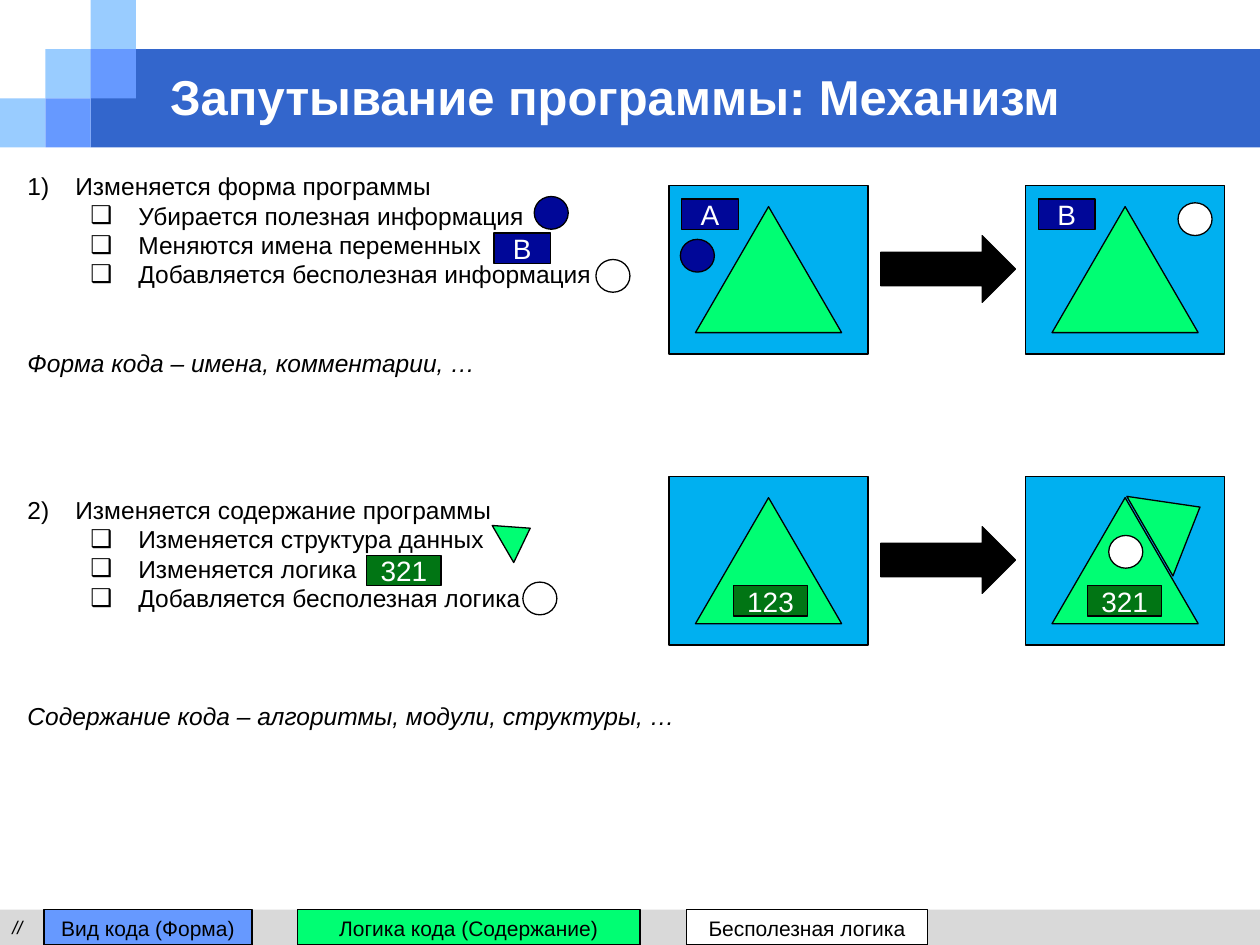
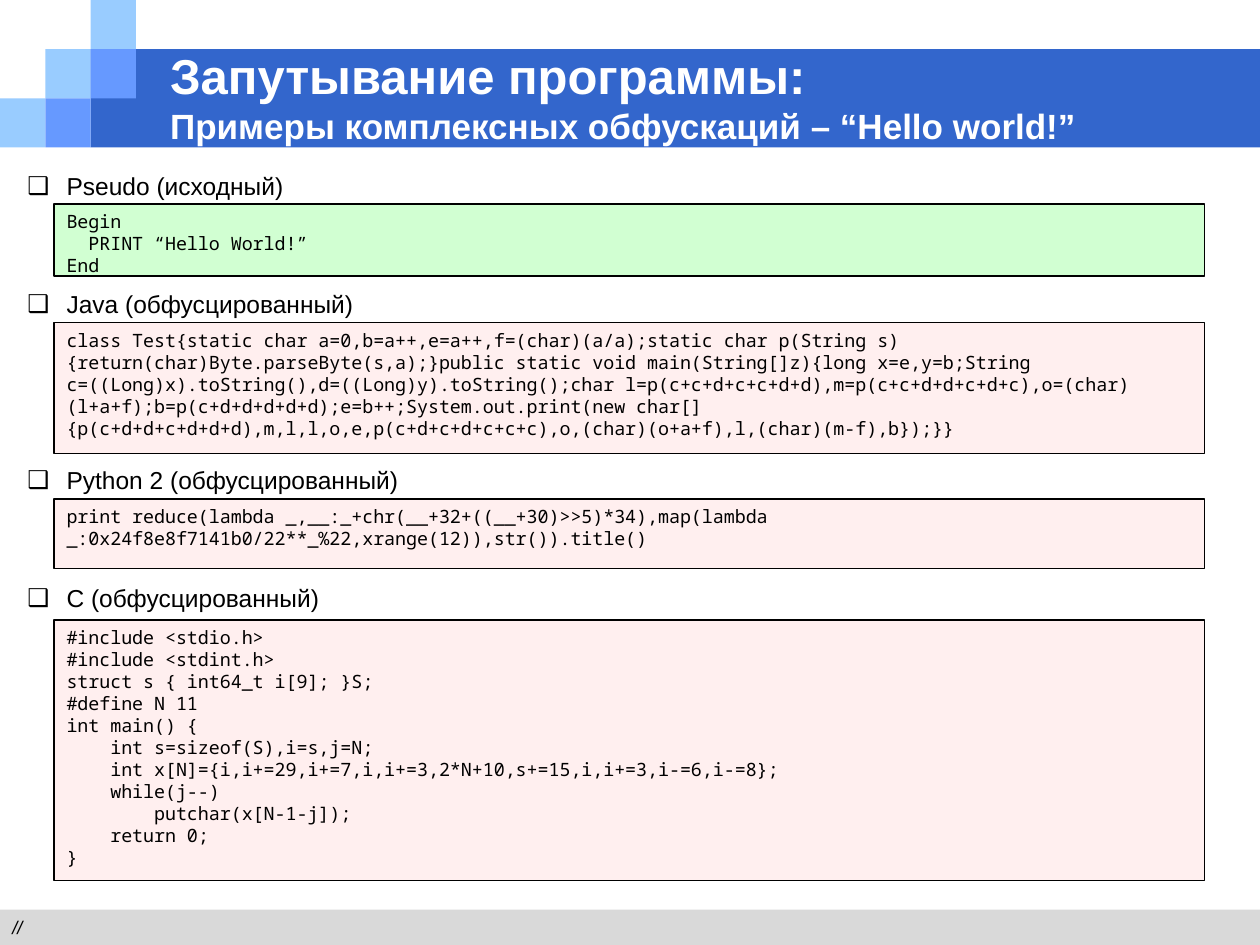
"""Builds two slides on how program code is obfuscated."""
from dataclasses import dataclass

from lxml import etree
from pptx import Presentation
from pptx.dml.color import RGBColor
from pptx.enum.shapes import MSO_SHAPE
from pptx.enum.text import MSO_ANCHOR, MSO_AUTO_SIZE, PP_ALIGN
from pptx.oxml.ns import qn
from pptx.util import Inches, Pt

RECT, OVAL = MSO_SHAPE.RECTANGLE, MSO_SHAPE.OVAL
TRIANGLE, ARROW = MSO_SHAPE.ISOSCELES_TRIANGLE, MSO_SHAPE.RIGHT_ARROW
TOP, MIDDLE = MSO_ANCHOR.TOP, MSO_ANCHOR.MIDDLE
LEFT, CENTER = PP_ALIGN.LEFT, PP_ALIGN.CENTER


@dataclass(frozen=True)
class Theme:
    """Colours, fonts and type sizes of the deck."""
    band: str = "3366CC"
    sky: str = "99CCFF"
    form: str = "6699FF"
    footer: str = "D9D9D9"
    program: str = "00B0F0"
    logic: str = "00FE73"
    name: str = "000798"
    value: str = "017514"
    plain_code: str = "D1FFD2"
    obfuscated_code: str = "FFEFEF"
    black: str = "000000"
    white: str = "FFFFFF"
    font: str = "Arial"
    mono: str = "Noto Sans Mono"
    title: float = 28
    subtitle: float = 20
    label: float = 16
    body: float = 14
    legend: float = 12
    small: float = 10.5
    outline: float = 0.75
    line_pitch: float = 16.8


THEME = Theme()
CHECKBOX = "❑"

MECHANISM_TITLE = [("Запутывание программы: Механизм", THEME.title)]
EXAMPLES_TITLE = [
    ("Запутывание программы:", THEME.title),
    ("Примеры комплексных обфускаций – “Hello world!”", THEME.subtitle),
]

MECHANISM = [
    ("step", "Изменяется форма программы", 0),
    ("detail", "Убирается полезная информация", 0),
    ("detail", "Меняются имена переменных", 0),
    ("detail", "Добавляется бесполезная информация", 0),
    ("remark", "Форма кода – имена, комментарии, …", 2),
    ("step", "Изменяется содержание программы", 4),
    ("detail", "Изменяется структура данных", 0),
    ("detail", "Изменяется логика", 0),
    ("detail", "Добавляется бесполезная логика", 0),
    ("remark", "Содержание кода – алгоритмы, модули, структуры, …", 3),
]
EXAMPLE_HEADINGS = [
    ("example", "Pseudo (исходный)", 0),
    ("example", "Java (обфусцированный)", 3),
    ("example", "Python 2 (обфусцированный)", 5),
    ("example", "C (обфусцированный)", 3),
]
INDENTS = {"step": 0.38, "detail": 0.88, "example": 0.31, "remark": 0}
HANGING = {"step": 0.38, "detail": 0.38, "example": 0.31, "remark": 0}

LEGEND = [
    ("Вид кода (Форма)", THEME.form, 0.35, 1.65),
    ("Логика кода (Содержание)", THEME.logic, 2.36, 2.72),
    ("Бесполезная логика", THEME.white, 5.45, 1.91),
]

MARKS = {
    "name": (RECT, THEME.name, 0.45, 0.24),
    "value": (RECT, THEME.value, 0.59, 0.24),
    "useful": (OVAL, THEME.name, 0.27, 0.26),
    "useless": (OVAL, THEME.white, 0.27, 0.26),
    "structure": (TRIANGLE, THEME.logic, 0.73, 0.46),
    "small structure": (TRIANGLE, THEME.logic, 0.34, 0.25),
}
PLACED_MARKS = [
    ("useless", "", 9.35, 1.61),
    ("useful", "", 5.4, 1.9),
    ("name", "A", 5.41, 1.58),
    ("name", "B", 8.24, 1.58),
    ("useless", "", 8.8, 4.25),
    ("value", "123", 5.82, 4.65),
    ("value", "321", 8.63, 4.65),
    ("structure", "", 8.96, 3.91),
    ("useful", "", 4.24, 1.56),
    ("name", "B", 3.92, 1.85),
    ("useless", "", 4.73, 2.06),
    ("small structure", "", 3.93, 4.13),
    ("useless", "", 4.15, 4.62),
    ("value", "321", 2.91, 4.41),
]
STRUCTURE_TILT = 59.9
PROGRAM_TOPS = (1.47, 3.78)
PROGRAM_LEFTS = (5.31, 8.14)

PSEUDO = ["Begin", "  PRINT “Hello World!”", "End"]
JAVA = [
    "class Test{static char a=0,b=a++,e=a++,f=(char)(a/a);"
    "static char p(String s){return(char)Byte.parseByte(s,a);}"
    "public static void main(String[]z){long x=e,y=b;"
    "String c=((Long)x).toString(),d=((Long)y).toString();"
    "char l=p(c+c+d+c+c+d+d),m=p(c+c+d+d+c+d+c),o=(char)(l+a+f);"
    "b=p(c+d+d+d+d+d);e=b++;System.out.print(new char[]"
    "{p(c+d+d+c+d+d+d),m,l,l,o,e,p(c+d+c+d+c+c+c),o,"
    "(char)(o+a+f),l,(char)(m-f),b});}}"
]
PYTHON = [
    "print reduce(lambda _,__:_+chr(__+32+((__+30)>>5)*34),"
    "map(lambda _:0x24f8e8f7141b0/22**_%22,xrange(12)),str()).title()"
]
C_CODE = [
    "#include <stdio.h>",
    "#include <stdint.h>",
    "struct s { int64_t i[9]; }S;",
    "#define N 11",
    "int main() {",
    "    int s=sizeof(S),i=s,j=N;",
    "    int x[N]={i,i+=29,i+=7,i,i+=3,2*N+10,s+=15,i,i+=3,i-=6,i-=8};",
    "    while(j--)",
    "        putchar(x[N-1-j]);",
    "    return 0;",
    "}",
]
LISTINGS = [
    (PSEUDO, THEME.plain_code, 1.62, 0.57),
    (JAVA, THEME.obfuscated_code, 2.56, 1.04),
    (PYTHON, THEME.obfuscated_code, 3.96, 0.55),
    (C_CODE, THEME.obfuscated_code, 4.92, 2.07),
]

CELL_W, CELL_H = 0.36, 0.39
MOSAIC = [
    (0, 2, THEME.sky), (1, 1, THEME.sky), (2, 0, THEME.sky),
    (2, 1, THEME.form), (1, 2, THEME.form),
]


def write(paragraph, text, size=THEME.body, color=THEME.black, font=THEME.font,
          bold=False, italic=False, align=LEFT):
    """Adds one formatted run to a paragraph."""
    paragraph.alignment = align
    run = paragraph.add_run()
    run.text = text
    run.font.size, run.font.name = Pt(size), font
    run.font.bold, run.font.italic = bold, italic
    run.font.color.rgb = RGBColor.from_string(color)


def write_lines(frame, lines, anchor=TOP, **style):
    """Fills a text frame with one paragraph per line."""
    frame.word_wrap = True
    frame.vertical_anchor = anchor
    for index, line in enumerate(lines):
        paragraph = frame.add_paragraph() if index else frame.paragraphs[0]
        write(paragraph, line, **style)


def draw(slide, preset, left, top, width, height, fill, outlined=True):
    """Adds a flat filled shape, with or without a thin black outline."""
    shape = slide.shapes.add_shape(
        preset, Inches(left), Inches(top), Inches(width), Inches(height))
    shape.shadow.inherit = False
    shape.fill.solid()
    shape.fill.fore_color.rgb = RGBColor.from_string(fill)
    if outlined:
        shape.line.color.rgb = RGBColor.from_string(THEME.black)
        shape.line.width = Pt(THEME.outline)
    else:
        shape.line.fill.background()
    return shape


def decorate_layout(layout, slide):
    """Puts the title band, the mosaic and the footer on the shared layout."""
    parts = [draw(slide, RECT, 2 * CELL_W, CELL_H, 10 - 2 * CELL_W, 2 * CELL_H,
                  THEME.band, outlined=False)]
    for column, row, color in MOSAIC:
        parts.append(draw(slide, RECT, column * CELL_W, row * CELL_H,
                          CELL_W, CELL_H, color, outlined=False))
    footer = draw(slide, RECT, 0, 7.22, 10, 0.28, THEME.footer, outlined=False)
    write_lines(footer.text_frame, ["//"], size=THEME.small, italic=True)
    for part in parts + [footer]:
        layout.element.cSld.spTree.append(part.element)


def set_title(slide, lines):
    """Places the title and writes its lines, each with its own size."""
    title = slide.shapes.title
    title.left, title.top = Inches(1.25), Inches(0.5)
    title.width, title.height = Inches(8.08), Inches(0.53)
    frame = title.text_frame
    frame.auto_size = MSO_AUTO_SIZE.NONE
    frame.word_wrap = True
    frame.vertical_anchor = MIDDLE
    paragraph = frame.paragraphs[0]
    for index, (text, size) in enumerate(lines):
        if index:
            paragraph.add_line_break()
        write(paragraph, text, size=size, color=THEME.white, bold=True)


def set_bullet(paragraph, role, number):
    """Gives a paragraph its indent and its number or checkbox."""
    properties = paragraph._p.get_or_add_pPr()
    properties.set("marL", str(Inches(INDENTS[role])))
    properties.set("indent", str(-Inches(HANGING[role])))
    if role == "step":
        etree.SubElement(properties, qn("a:buAutoNum"),
                         type="arabicParenR", startAt=str(number))
    elif role != "remark":
        etree.SubElement(properties, qn("a:buFont"), typeface=THEME.font)
        etree.SubElement(properties, qn("a:buChar"), char=CHECKBOX)


def add_outline(slide, items, height):
    """Adds the bulleted text, with skipped lines made as paragraph spacing."""
    box = slide.shapes.add_textbox(
        Inches(0.12), Inches(1.31), Inches(9.76), Inches(height))
    frame = box.text_frame
    frame.word_wrap = True
    step = 0
    for index, (role, text, skipped) in enumerate(items):
        paragraph = frame.add_paragraph() if index else frame.paragraphs[0]
        step += role == "step"
        paragraph.space_before = Pt(skipped * THEME.line_pitch)
        write(paragraph, text, italic=role == "remark")
        set_bullet(paragraph, role, step)


def build_mechanism(slide):
    """Shows how form and content of a program change."""
    set_title(slide, MECHANISM_TITLE)
    add_outline(slide, MECHANISM, 5.28)
    for top in PROGRAM_TOPS:
        for left in PROGRAM_LEFTS:
            draw(slide, RECT, left, top, 1.58, 1.34, THEME.program)
            draw(slide, TRIANGLE, left + 0.21, top + 0.17, 1.16, 1, THEME.logic)
        draw(slide, ARROW, 6.99, top + 0.4, 1.07, 0.53, THEME.black)
    for text, color, left, width in LEGEND:
        entry = draw(slide, RECT, left, 7.22, width, 0.28, color)
        write_lines(entry.text_frame, [text], size=THEME.legend, align=CENTER)
    for kind, label, left, top in PLACED_MARKS:
        preset, color, width, height = MARKS[kind]
        mark = draw(slide, preset, left, top, width, height, color)
        if preset == TRIANGLE:
            mark.rotation = STRUCTURE_TILT
        if label:
            write_lines(mark.text_frame, [label], anchor=MIDDLE,
                        size=THEME.label, color=THEME.white, align=CENTER)


def build_examples(slide):
    """Shows one program in plain and obfuscated code."""
    set_title(slide, EXAMPLES_TITLE)
    add_outline(slide, EXAMPLE_HEADINGS, 3.87)
    for code, color, top, height in LISTINGS:
        listing = draw(slide, RECT, 0.43, top, 9.13, height, color)
        write_lines(listing.text_frame, code, size=THEME.small, font=THEME.mono)


def main():
    """Builds and saves the deck."""
    deck = Presentation()
    deck.slide_width, deck.slide_height = Inches(10), Inches(7.5)
    layout = deck.slide_layouts[5]
    mechanism, examples = (deck.slides.add_slide(layout) for _ in range(2))
    decorate_layout(layout, mechanism)
    build_mechanism(mechanism)
    build_examples(examples)
    deck.save("out.pptx")


if __name__ == "__main__":
    main()
